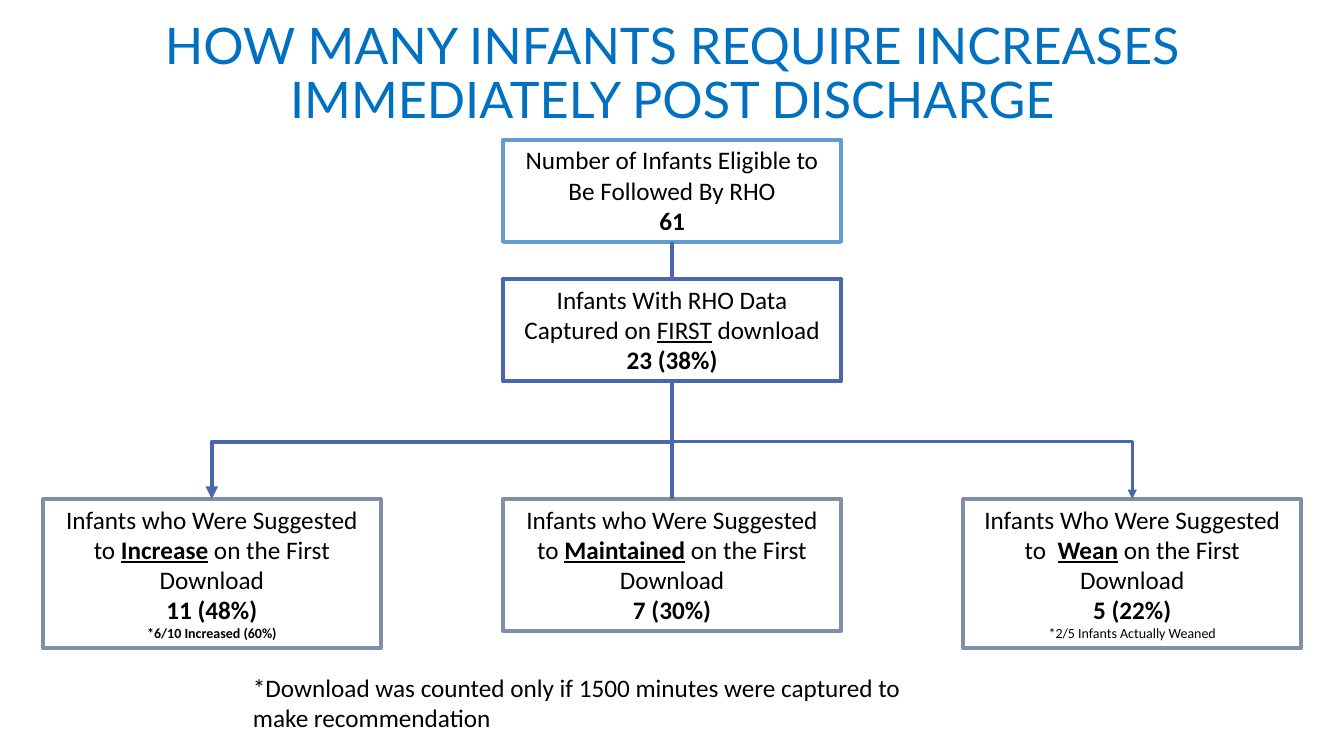
from dataclasses import dataclass

from lxml import etree
from pptx import Presentation
from pptx.dml.color import RGBColor
from pptx.enum.shapes import MSO_CONNECTOR, MSO_SHAPE
from pptx.enum.text import MSO_ANCHOR, MSO_AUTO_SIZE, PP_ALIGN
from pptx.oxml.ns import qn
from pptx.util import Inches, Pt

RECT = MSO_SHAPE.RECTANGLE
STRAIGHT, ELBOW = MSO_CONNECTOR.STRAIGHT, MSO_CONNECTOR.ELBOW
TOP, MIDDLE = MSO_ANCHOR.TOP, MSO_ANCHOR.MIDDLE
LEFT, CENTER = PP_ALIGN.LEFT, PP_ALIGN.CENTER
GROW = MSO_AUTO_SIZE.SHAPE_TO_FIT_TEXT


@dataclass(frozen=True)
class Theme:
    title: str = "0070C0"
    ink: str = "000000"
    paper: str = "FFFFFF"
    sky: str = "629DD1"
    navy: str = "4A66AC"
    slate: str = "7F8FA9"
    head: str = "Lato"
    body: str = "Calibri"
    big: float = 36
    text: float = 18
    small: float = 10
    thick: float = 3
    thin: float = 2.25


class Chart:
    step = 34.24
    wide = 25.13

    def __init__(self, deck, theme):
        self.theme = theme
        self.wd, self.ht = deck.slide_width, deck.slide_height
        self.slide = deck.slides.add_slide(deck.slide_layouts[6])

    def x(self, share):
        return round(self.wd * share / 100)

    def y(self, share):
        return round(self.ht * share / 100)

    def mid(self, col):
        return 50 + (col - 1) * self.step

    def area(self, left, top, wide, high):
        return self.x(left), self.y(top), self.x(wide), self.y(high)

    def fill(self, frame, paras, align, size, face, tint):
        frame.word_wrap = True
        for n, runs in enumerate(paras):
            para = frame.paragraphs[0] if n == 0 else frame.add_paragraph()
            para.alignment = align
            for text, style in runs:
                run = para.add_run()
                run.text = text
                font = run.font
                font.name = face
                font.size = Pt(self.theme.small if "s" in style else size)
                font.bold = "b" in style
                font.underline = "u" in style
                font.color.rgb = RGBColor.from_string(tint)

    def title(self, text, *area):
        t = self.theme
        frame = self.slide.shapes.add_textbox(*self.area(*area)).text_frame
        self.fill(frame, [[(text, "")]], CENTER, t.big, t.head, t.title)
        frame.vertical_anchor = MIDDLE
        frame.paragraphs[0].line_spacing = 0.9

    def note(self, text, *area):
        t = self.theme
        frame = self.slide.shapes.add_textbox(*self.area(*area)).text_frame
        self.fill(frame, [[(text, "")]], LEFT, t.text, t.body, t.ink)
        frame.auto_size = GROW

    def box(self, col, top, high, tint, paras):
        t = self.theme
        left = self.mid(col) - self.wide / 2
        box = self.slide.shapes.add_shape(
            RECT, *self.area(left, top, self.wide, high))
        box.shadow.inherit = False
        box.fill.solid()
        box.fill.fore_color.rgb = RGBColor.from_string(t.paper)
        box.line.color.rgb = RGBColor.from_string(tint)
        box.line.width = Pt(t.thick)
        frame = box.text_frame
        self.fill(frame, paras, CENTER, t.text, t.body, t.ink)
        frame.vertical_anchor = TOP
        frame.auto_size = GROW
        return box

    def wire(self, kind, ends, width):
        wire = self.slide.shapes.add_connector(kind, *ends)
        wire.line.color.rgb = RGBColor.from_string(self.theme.navy)
        wire.line.width = Pt(width)
        etree.SubElement(wire._element.spPr, qn("a:effectLst"))
        return wire

    def link(self, lower, width, upper=None, start=0):
        x = lower.left + lower.width // 2
        y = upper.top + upper.height if upper else self.y(start)
        wire = self.wire(STRAIGHT, (x, y, x, lower.top), width)
        if upper:
            wire.begin_connect(upper, 2)
        wire.end_connect(lower, 0)

    def branch(self, upper, lower, width):
        x1 = upper.left + upper.width // 2
        x2 = lower.left + lower.width // 2
        y1, y2 = upper.top + upper.height, lower.top
        run, drop = abs(x2 - x1), y2 - y1
        left = (x1 + x2 - drop) // 2
        top = (y1 + y2 - run) // 2
        ends = (left, left + drop)
        right = x2 > x1
        if right:
            ends = ends[::-1]
        wire = self.wire(ELBOW, (ends[0], top, ends[1], top + run), width)
        props = wire._element.spPr
        turn = 270 if right else 90
        props.find(qn("a:xfrm")).set("rot", str(turn * 60000))
        guides = props.find(qn("a:prstGeom")).find(qn("a:avLst"))
        etree.SubElement(guides, qn("a:gd"), name="adj1", fmla="val 51500")
        etree.SubElement(props.find(qn("a:ln")), qn("a:tailEnd"), type="triangle")


def main():
    deck = Presentation()
    deck.slide_width, deck.slide_height = Inches(13.33), Inches(7.5)
    t = Theme()
    page = Chart(deck, t)
    page.title("HOW MANY INFANTS REQUIRE INCREASES IMMEDIATELY POST DISCHARGE",
               6.9, 0.27, 86.27, 19.33)
    pool = page.box(1, 18.5, 13.5, t.sky, [
        [("Number of Infants Eligible to Be Followed By RHO", "")],
        [("61", "b")]])
    data = page.box(1, 36.9, 13.5, t.navy, [
        [("Infants With RHO Data Captured on ", ""), ("FIRST", "u"),
         (" download", "")],
        [("23 (38%)", "b")]])
    groups = [
        ("Infants who Were Suggested to ", "Increase", "11 (48%)",
         [("*6/10 Increased (60%)", "bs")]),
        ("Infants who Were Suggested to ", "Maintained", "7 (30%)", None),
        ("Infants Who Were Suggested to  ", "Wean", "5 (22%)",
         [("*2/5 Infants Actually Weaned", "s")]),
    ]
    boxes = []
    for col, (lead, word, count, extra) in enumerate(groups):
        paras = [[(lead, ""), (word, "bu"), (" on the First Download", "")],
                 [(count, "b")]]
        if extra:
            paras.append(extra)
        high = 19.73 if extra else 17.5
        boxes.append(page.box(col, 66, high, t.slate, paras))
    more, same, less = boxes
    page.link(data, t.thick, upper=pool)
    page.branch(data, more, t.thick)
    page.branch(data, less, t.thin)
    page.link(same, t.thin, start=58.13)
    page.note("*Download was counted only if 1500 minutes were captured to "
              "make recommendation", 18.08, 88.27, 50.79, 9.47)
    deck.save("out.pptx")


if __name__ == "__main__":
    main()
